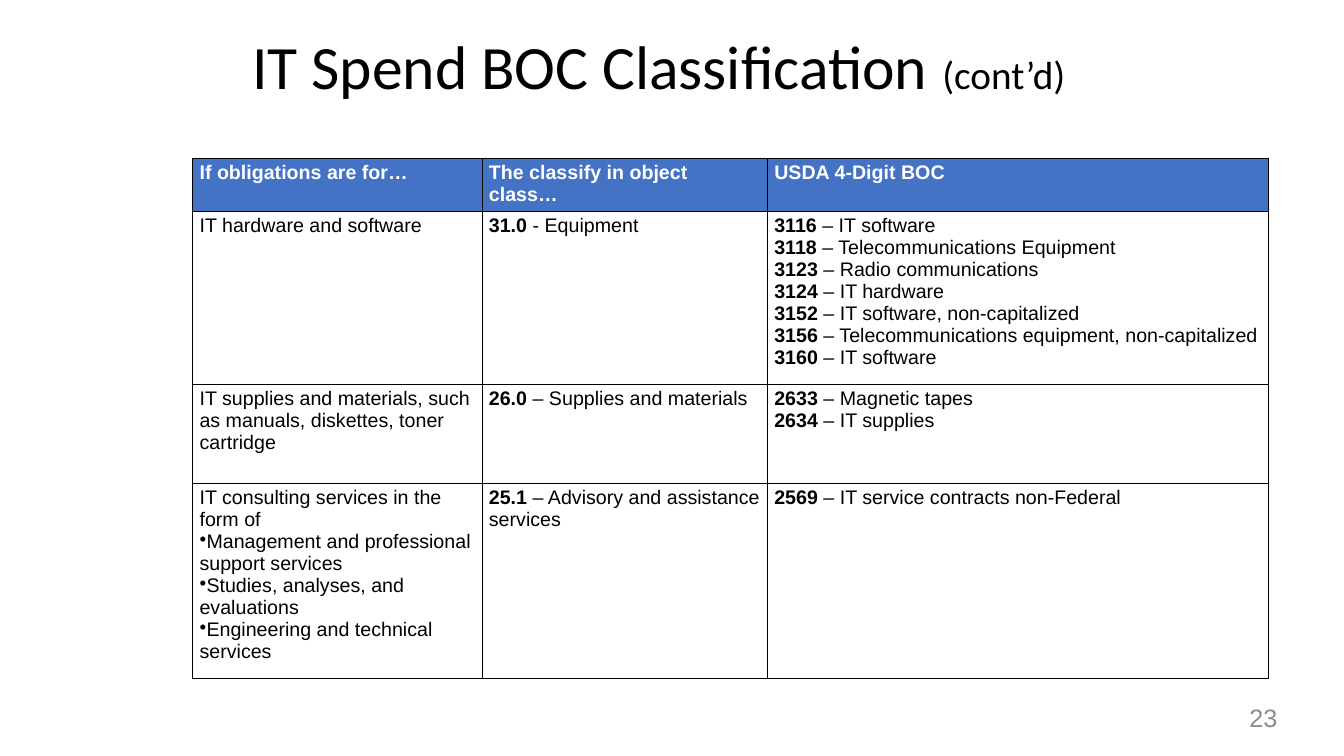
import pptx
import pptx.dml.color
import pptx.enum.text
import pptx.oxml
import pptx.oxml.ns
import pptx.util

Inches, Pt = pptx.util.Inches, pptx.util.Pt
RGBColor = pptx.dml.color.RGBColor
ALIGN = pptx.enum.text.PP_ALIGN

BLACK = RGBColor(0x00, 0x00, 0x00)
WHITE = RGBColor(0xFF, 0xFF, 0xFF)
BLUE = RGBColor(0x44, 0x72, 0xC4)
GRAY = RGBColor(0x8C, 0x8C, 0x8C)


def add_run(p, text, color, **font):
    r = p.add_run()
    r.text = text
    r.font.color.rgb = color
    for name, value in font.items():
        setattr(r.font, name, value)


def add_box(s, left, top, width, height):
    tf = s.shapes.add_textbox(Inches(left), Inches(top), Inches(width), Inches(height)).text_frame
    layout = {"word_wrap": True, "margin_left": 0, "margin_right": 0,
              "margin_top": 0, "margin_bottom": 0}
    for name, value in layout.items():
        setattr(tf, name, value)
    return tf.paragraphs[0]


prs = pptx.Presentation()
prs.slide_width, prs.slide_height = Inches(13.33), Inches(7.5)
s = prs.slides.add_slide(prs.slide_layouts[6])

# Title
p = add_box(s, 2.5, 0.28, 10.35, 0.74)
add_run(p, "IT Spend BOC Classification ", BLACK, name="Calibri", size=Pt(44))
add_run(p, "(cont’d)", BLACK, name="Calibri", size=Pt(28))

# Table content: text before "|" is bold, a leading "•" makes a bullet
rows = [
    [["If obligations are for…"], ["The classify in object class…"], ["USDA 4-Digit BOC"]],
    [["IT hardware and software"],
     ["31.0| - Equipment"],
     ["3116| – IT software",
      "3118| – Telecommunications Equipment",
      "3123| – Radio communications",
      "3124| – IT hardware",
      "3152| – IT software, non-capitalized",
      "3156| – Telecommunications equipment, non-capitalized",
      "3160| – IT software"]],
    [["IT supplies and materials, such as manuals, diskettes, toner cartridge"],
     ["26.0| – Supplies and materials"],
     ["2633| – Magnetic tapes", "2634| – IT supplies"]],
    [["IT consulting services in the form of",
      "•Management and professional support services",
      "•Studies, analyses, and evaluations",
      "•Engineering and technical services"],
     ["25.1| – Advisory and assistance services"],
     ["2569| – IT service contracts non-Federal"]],
]
col_widths = [2.87, 2.83, 4.97]
row_heights = [0.51, 1.72, 0.98, 1.82]

# Table grid
table = s.shapes.add_table(len(rows), len(col_widths), Inches(1.91), Inches(1.57),
                           Inches(sum(col_widths)), Inches(sum(row_heights))).table
table.horz_banding = False
for col, width in zip(table.columns, col_widths):
    col.width = Inches(width)
for row, height in zip(table.rows, row_heights):
    row.height = Inches(height)

cell_margins = {"margin_left": 0.07, "margin_right": 0.07,
                "margin_top": 0.03, "margin_bottom": 0.03}
for i, row in enumerate(rows):
    header = i == 0
    color = WHITE if header else BLACK
    for j, lines in enumerate(row):
        cell = table.cell(i, j)
        for name, value in cell_margins.items():
            setattr(cell, name, Inches(value))

        # Borders, then fill
        tcPr = cell._tc.get_or_add_tcPr()
        for side in ("lnL", "lnR", "lnT", "lnB"):
            tcPr.append(pptx.oxml.parse_xml(
                f'<a:{side} {pptx.oxml.ns.nsdecls("a")} w="{Pt(0.6)}">'
                f'<a:solidFill><a:srgbClr val="{BLACK}"/></a:solidFill></a:{side}>'))
        if header:
            cell.fill.solid()
            cell.fill.fore_color.rgb = BLUE
        else:
            cell.fill.background()

        # Text
        tf = cell.text_frame
        for n, line in enumerate(lines):
            p = tf.add_paragraph() if n else tf.paragraphs[0]
            if line.startswith("•"):
                pPr = p._p.get_or_add_pPr()
                pPr.set("marL", "0")
                pPr.set("indent", "0")
                pPr.append(pptx.oxml.parse_xml(
                    f'<a:buChar {pptx.oxml.ns.nsdecls("a")} char="•"/>'))
            code, bar, label = line.lstrip("•").rpartition("|")
            for text, bold in ((code, True), (label, header)):
                if text:
                    add_run(p, text, color, name="Arial", size=Pt(14), bold=bold)

# Page number
p = add_box(s, 9.6, 6.97, 3.07, 0.3)
p.alignment = ALIGN.RIGHT
add_run(p, "23", GRAY, name="Arial", size=Pt(18))

prs.save("out.pptx")
